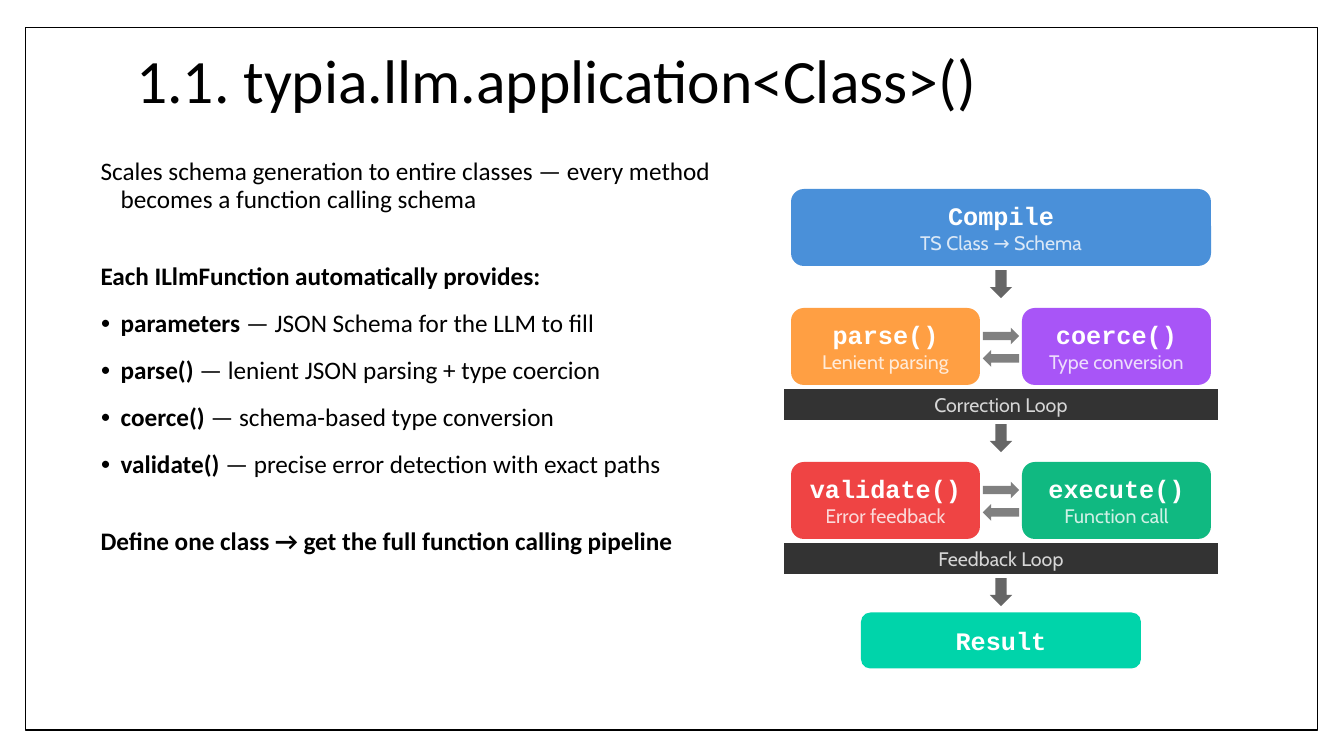
import pptx
import pptx.dml.color
import pptx.enum.shapes
import pptx.enum.text
import pptx.oxml.ns
import pptx.util
import lxml.etree

SHAPE = pptx.enum.shapes.MSO_SHAPE
ALIGN = pptx.enum.text.PP_ALIGN
ANCHOR = pptx.enum.text.MSO_ANCHOR
SLIDE_WIDTH = pptx.util.Inches(13.33)
SLIDE_HEIGHT = pptx.util.Inches(7.5)
COLUMN = SLIDE_WIDTH / 96
ROW = SLIDE_HEIGHT / 108

COLORS = {
    "white": "FFFFFF",
    "black": "000000",
    "compile": "4A90D9",
    "parse": "FF9F43",
    "coerce": "A855F7",
    "validate": "EF4444",
    "execute": "10B981",
    "result": "00D4AA",
    "bar": "333333",
    "down": "666666",
    "exchange": "808080",
}

BODY = [
    (0, False, [("Scales schema generation to entire classes — every method becomes a function calling schema", False)]),
    (36, False, [("Each ILlmFunction automatically provides:", True)]),
    (14, True, [("parameters", True), (" — JSON Schema for the LLM to fill", False)]),
    (14, True, [("parse()", True), (" — lenient JSON parsing + type coercion", False)]),
    (14, True, [("coerce()", True), (" — schema-based type conversion", False)]),
    (14, True, [("validate()", True), (" — precise error detection with exact paths", False)]),
    (36, False, [("Define one class → get the full function calling pipeline", True)]),
]

LOOPS = [
    (("parse()", "Lenient parsing", "parse"), ("coerce()", "Type conversion", "coerce"), "Correction Loop"),
    (("validate()", "Error feedback", "validate"), ("execute()", "Function call", "execute"), "Feedback Loop"),
]


def rgb(name):
    return pptx.dml.color.RGBColor.from_string(COLORS[name])


def grid(box):
    left, top, width, height = box
    return [round(length) for length in (left * COLUMN, top * ROW, width * COLUMN, height * ROW)]


def place(shape, box):
    shape.left, shape.top, shape.width, shape.height = grid(box)


def add_run(paragraph, text, font, size, color, bold=False, opacity=100):
    run = paragraph.add_run()
    run.text = text
    run.font.name = font
    run.font.size = pptx.util.Pt(size)
    run.font.bold = bold
    run.font.color.rgb = rgb(color)
    if opacity < 100:
        color_element = run.font.fill._xPr.find(".//" + pptx.oxml.ns.qn("a:srgbClr"))
        alpha = lxml.etree.SubElement(color_element, pptx.oxml.ns.qn("a:alpha"))
        alpha.set("val", str(opacity * 1000))


def add_block(shapes, kind, box, color):
    shape = shapes.add_shape(kind, *grid(box))
    shape.shadow.inherit = False
    shape.fill.solid()
    shape.fill.fore_color.rgb = rgb(color)
    shape.line.fill.background()
    return shape


def add_label(shapes, kind, box, color, heading="", caption=""):
    frame = add_block(shapes, kind, box, color).text_frame
    frame.word_wrap = True
    frame.vertical_anchor = ANCHOR.MIDDLE
    frame.margin_left = frame.margin_right = pptx.util.Inches(0.06)
    frame.margin_top = frame.margin_bottom = pptx.util.Inches(0.04)
    paragraph = frame.paragraphs[0]
    paragraph.alignment = ALIGN.CENTER
    if heading:
        add_run(paragraph, heading, "Courier New", 18, "white", True)
    if heading and caption:
        paragraph = frame.add_paragraph()
        paragraph.alignment = ALIGN.CENTER
    if caption:
        add_run(paragraph, caption, "Cabin", 14, "white", opacity=80)


def draw_frame(slide, box):
    shape = add_block(slide.shapes, SHAPE.RECTANGLE, box, "white")
    shape.line.color.rgb = rgb("black")
    shape.line.width = pptx.util.Pt(1)
    shape.element.getparent().insert(2, shape.element)


def fill_title(slide, box):
    title = slide.shapes.title
    place(title, box)
    frame = title.text_frame
    frame.auto_size = pptx.enum.text.MSO_AUTO_SIZE.NONE
    frame.vertical_anchor = ANCHOR.MIDDLE
    paragraph = frame.paragraphs[0]
    paragraph.alignment = ALIGN.LEFT
    paragraph.line_spacing = 0.9
    add_run(paragraph, "1.1. typia.llm.application<Class>()", "Calibri", 44, "black")


def set_bullet(paragraph, bulleted):
    properties = paragraph._p.get_or_add_pPr()
    properties.set("marL", str(pptx.util.Inches(0.25)))
    properties.set("indent", str(pptx.util.Inches(-0.2)))

    def add(parent, tag, **attributes):
        return lxml.etree.SubElement(parent, pptx.oxml.ns.qn(tag), **attributes)

    if not bulleted:
        add(properties, "a:buNone")
        return
    add(add(properties, "a:buClr"), "a:srgbClr", val=COLORS["black"])
    add(properties, "a:buSzPct", val="80000")
    add(properties, "a:buFont", typeface="Calibri")
    add(properties, "a:buChar", char="•")


def fill_body(slide, box):
    body = slide.placeholders[1]
    place(body, box)
    frame = body.text_frame
    frame.auto_size = pptx.enum.text.MSO_AUTO_SIZE.NONE
    frame.vertical_anchor = ANCHOR.TOP
    for index, (space, bulleted, runs) in enumerate(BODY):
        paragraph = frame.add_paragraph() if index else frame.paragraphs[0]
        set_bullet(paragraph, bulleted)
        paragraph.alignment = ALIGN.LEFT
        paragraph.line_spacing = 0.9
        paragraph.space_before = pptx.util.Pt(space)
        for text, bold in runs:
            add_run(paragraph, text, "Calibri", 18, "black", bold)


def draw_loop(shapes, box, first, second, caption):
    left, top, width, height = box
    half = 13.5
    for offset, (heading, note, color) in ((0, first), (width - half, second)):
        add_label(shapes, SHAPE.ROUNDED_RECTANGLE, (left + offset, top, half, height), color, heading, note)
    for kind, offset in ((SHAPE.RIGHT_ARROW, 2.8), (SHAPE.LEFT_ARROW, 6)):
        add_block(shapes, kind, (left + half + 0.2, top + offset, 2.6, 2.4), "exchange")
    add_label(shapes, SHAPE.RECTANGLE, (left - 0.5, top + height + 0.6, width + 1, 4.4), "bar", caption=caption)


def draw_pipeline(slide, box):
    left, top, width, height = box
    shapes = slide.shapes.add_group_shape().shapes
    stage = 11
    loop_pitch = 22
    loops_top = top + 17
    add_label(shapes, SHAPE.ROUNDED_RECTANGLE, (left, top, width, stage), "compile", "Compile", "TS Class → Schema")
    for index, loop in enumerate(LOOPS):
        draw_loop(shapes, (left, loops_top + index * loop_pitch, width, stage), *loop)
    for index in range(len(LOOPS) + 1):
        arrow_top = loops_top - 5.4 + index * loop_pitch
        add_block(shapes, SHAPE.DOWN_ARROW, (left + width / 2 - 0.8, arrow_top, 1.6, 4), "down")
    result = (left + width / 6, top + height - 8, width * 2 / 3, 8)
    add_label(shapes, SHAPE.ROUNDED_RECTANGLE, result, "result", "Result")


def main():
    presentation = pptx.Presentation()
    presentation.slide_width = SLIDE_WIDTH
    presentation.slide_height = SLIDE_HEIGHT
    slide = presentation.slides.add_slide(presentation.slide_layouts[1])
    draw_frame(slide, (1.8, 3.9, 92.3, 100.4))
    fill_title(slide, (9, 6, 77.8, 12))
    fill_body(slide, (6.1, 22, 46.9, 76))
    draw_pipeline(slide, (56.5, 27, 30, 68.5))
    presentation.save("out.pptx")


if __name__ == "__main__":
    main()
